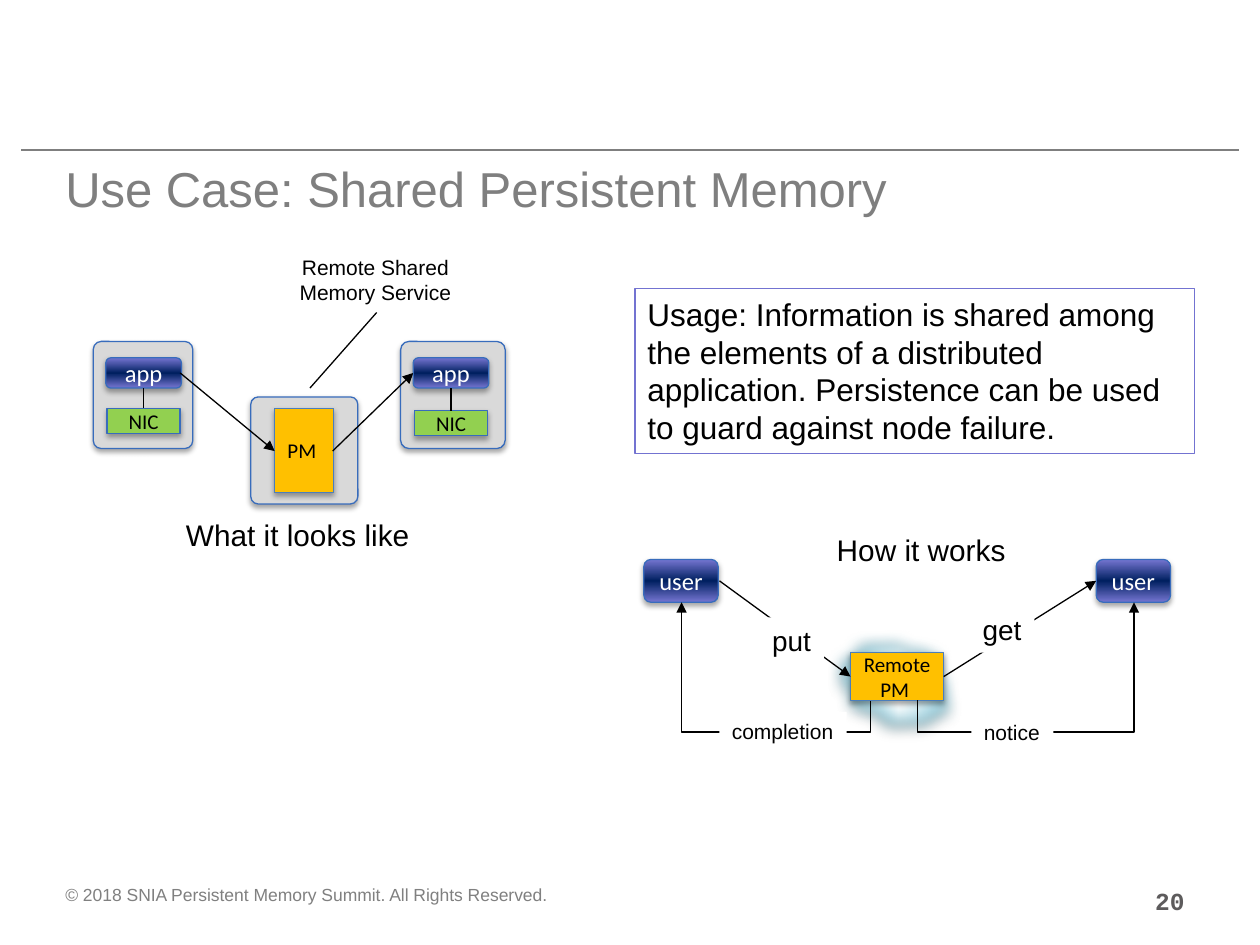
from lxml import etree
from pptx import Presentation
from pptx.dml.color import RGBColor
from pptx.enum.shapes import MSO_CONNECTOR, MSO_SHAPE
from pptx.enum.text import MSO_ANCHOR, PP_ALIGN
from pptx.oxml.ns import qn
from pptx.util import Inches, Pt

LEFT, CENTER, RIGHT = PP_ALIGN.LEFT, PP_ALIGN.CENTER, PP_ALIGN.RIGHT
TOP, MIDDLE = MSO_ANCHOR.TOP, MSO_ANCHOR.MIDDLE
RECT, ROUND, CLOUD = MSO_SHAPE.RECTANGLE, MSO_SHAPE.ROUNDED_RECTANGLE, MSO_SHAPE.CLOUD
STRAIGHT, ELBOW = MSO_CONNECTOR.STRAIGHT, MSO_CONNECTOR.ELBOW

BLACK = RGBColor(0, 0, 0)
WHITE = RGBColor(0xFF, 0xFF, 0xFF)
GRAY = RGBColor(0x7F, 0x7F, 0x7F)
FOOTER = RGBColor(0x80, 0x80, 0x80)
NUMBER = RGBColor(0x5D, 0x5B, 0x5C)
PURPLE = RGBColor(0x73, 0x73, 0xD1)
NODE = RGBColor(0xD9, 0xD9, 0xD9)
BLUE = RGBColor(0x38, 0x6C, 0xBC)
STEEL = RGBColor(0x4B, 0x7E, 0xBC)
AMBER = RGBColor(0xFF, 0xC0, 0x00)
GREEN = RGBColor(0x92, 0xD0, 0x50)
TEAL = RGBColor(0x93, 0xCD, 0xDD)
APP_STOPS = [(0, "7575D1"), (50, "002060"), (100, "7575D1")]
CLOUD_STOPS = [(9, "93CDDD"), (52, "FFFFFF"), (93, "93CDDD")]

# Text: box, wording, size, colour, alignment, anchor, font, bold
TEXTS = [
    ((0.42, 6.97, 8.08, 0.39), "© 2018 SNIA Persistent Memory Summit. All Rights Reserved.",
     10, FOOTER, LEFT, TOP, "Arial", False),
    ((0.42, 1.12, 7.33, 0.75), "Use Case: Shared Persistent Memory",
     28, GRAY, LEFT, MIDDLE, "Arial", False),
    ((1.25, 4.05, 2.1, 0.4), "What it looks like", 17, BLACK, RIGHT, TOP, "Arial", False),
    ((6.37, 4.17, 1.71, 0.36), "How it works", 17, BLACK, RIGHT, TOP, "Arial", False),
    ((2.23, 1.97, 1.5, 0.5), "Remote Shared Memory Service",
     12, BLACK, CENTER, TOP, "Arial", False),
    ((7.17, 6.98, 2.33, 0.52), "20", 14, NUMBER, RIGHT, TOP, "Courier New", True),
]
USAGE = ("Usage: Information is shared among the elements of a distributed application. "
         "Persistence can be used to guard against node failure.")

# Application nodes: left, width, app left, NIC top
NODES = [(0.74, 0.79, 0.84, 3.24), (3.18, 0.83, 3.28, 3.26)]
USERS = [5.11, 8.7]

# Straight lines: start, end, arrowhead at the end
MEMORY_LINES = [
    ((1.43, 2.96), (2.18, 3.58), True),
    ((2.64, 3.58), (3.28, 2.96), True),
    ((2.99, 2.48), (2.46, 3.08), False),
]
FLOW_LINES = [((5.71, 4.61), (6.75, 5.37), True), ((7.49, 5.37), (8.7, 4.61), True)]
# Elbows, turned 90 degrees: box, bend, flipped, arrow end
FLOW_ELBOWS = [
    ((5.77, 4.42, 0.78, 1.5), -32200, True, "tailEnd"),
    ((7.75, 4.31, 0.78, 1.72), 132200, False, "headEnd"),
]
FLOW_LABELS = [
    ((5.71, 5.65, 1.01, 0.3), "completion", 12),
    ((6.03, 4.9, 0.51, 0.37), "put", 16),
    ((7.7, 4.81, 0.51, 0.37), "get", 16),
    ((7.71, 5.66, 0.65, 0.3), "notice", 12),
]

prs = Presentation()
prs.slide_width, prs.slide_height = Inches(10), Inches(7.5)
s = prs.slides.add_slide(prs.slide_layouts[6])


def sub(parent, tag, **attrs):
    return etree.SubElement(parent, qn(tag), attrs)


def write(shape, text, size, color, align=LEFT, anchor=TOP, font="Arial",
          bold=False, wrap=True, side=0.1, edge=0.05):
    tf = shape.text_frame
    tf.text = text
    tf.word_wrap, tf.vertical_anchor = wrap, anchor
    tf.margin_left = tf.margin_right = Inches(side)
    tf.margin_top = tf.margin_bottom = Inches(edge)
    for p in tf.paragraphs:
        p.alignment = align
        for r in p.runs:
            r.font.name, r.font.size, r.font.bold = font, Pt(size), bold
            r.font.color.rgb = color


def add_box(kind, at, fill=None, line=None, shadow=False, adj=None, soft=False):
    sp = s.shapes.add_shape(kind, *map(Inches, at))
    if adj is not None:
        sp.adjustments[0] = adj
    if isinstance(fill, list):
        sp.fill.gradient()
        sp.fill.gradient_angle = 90
        stops = sp._element.spPr.find(".//" + qn("a:gsLst"))
        for old in list(stops):
            stops.remove(old)
        for pos, color in fill:
            sub(sub(stops, "a:gs", pos=str(pos * 1000)), "a:srgbClr", val=color)
    elif fill is not None:
        sp.fill.solid()
        sp.fill.fore_color.rgb = fill
    else:
        sp.fill.background()
    if line is not None:
        sp.line.color.rgb, sp.line.width = line, Pt(0.75)
    else:
        sp.line.fill.background()
    sp.shadow.inherit = False
    effects = sp._element.spPr.find(qn("a:effectLst"))
    if shadow:
        outer = sub(effects, "a:outerShdw", blurRad=str(Pt(3.1)), dist=str(Pt(1.8)),
                    dir="5400000", rotWithShape="0")
        sub(sub(outer, "a:srgbClr", val="000000"), "a:alpha", val="35000")
    if soft:
        sub(effects, "a:softEdge", rad=str(Pt(8.9)))
    return sp


def add_block(kind, at, text, size, fill, line=BLUE, color=BLACK):
    sp = add_box(kind, at, fill, line, shadow=True)
    write(sp, text, size, color, CENTER, MIDDLE, "Calibri", side=0, edge=0)


def add_line(start, end, arrow=None, color=BLACK, kind=STRAIGHT):
    c = s.shapes.add_connector(kind, *map(Inches, (*start, *end)))
    c.line.color.rgb, c.line.width = color, Pt(0.75)
    if arrow:
        sub(c.line._get_or_add_ln(), "a:" + arrow, type="triangle")
    sub(c._element.spPr, "a:effectLst")
    return c


def add_elbow(at, bend, flipped, arrow):
    x, y, w, h = at
    spPr = add_line((x, y), (x + w, y + h), arrow, kind=ELBOW)._element.spPr
    xfrm = spPr.find(qn("a:xfrm"))
    xfrm.set("rot", "5400000")
    if flipped:
        xfrm.set("flipH", "1")
    guides = spPr.find(qn("a:prstGeom")).find(qn("a:avLst"))
    sub(guides, "a:gd", name="adj1", fmla=f"val {bend}")


# Header rule, title, captions and footer
add_line((0.17, 1.19), (9.83, 1.19), color=GRAY)
for at, *style in TEXTS:
    write(s.shapes.add_textbox(*map(Inches, at)), *style)
write(add_box(RECT, (5.04, 2.29, 4.44, 1.31), line=PURPLE), USAGE, 18, BLACK)

# What it looks like: shared memory between two nodes
add_box(ROUND, (1.99, 3.15, 0.85, 0.85), NODE, BLUE, True, 0.07)
add_block(RECT, (2.18, 3.24, 0.47, 0.67), "PM ", 12, AMBER, STEEL)
for left, width, app, nic_top in NODES:
    add_box(ROUND, (left, 2.71, width, 0.85), NODE, BLUE, True, 0.08)
    add_block(ROUND, (app, 2.84, 0.6, 0.24), "app", 14, APP_STOPS, color=WHITE)
    add_block(RECT, (app + 0.01, nic_top, 0.58, 0.2), "NIC", 12, GREEN)
    add_line((app + 0.3, 3.08), (app + 0.3, nic_top))
for start, end, arrow in MEMORY_LINES:
    add_line(start, end, "tailEnd" if arrow else None)

# How it works: users around the remote memory
add_box(CLOUD, (6.61, 4.8, 0.94, 1.25), TEAL, shadow=True, soft=True).rotation = 90
add_box(CLOUD, (6.69, 4.86, 0.83, 1.12), CLOUD_STOPS, soft=True).rotation = 90
for left in USERS:
    add_block(ROUND, (left, 4.44, 0.59, 0.34), "user", 14, APP_STOPS, color=WHITE)
add_block(RECT, (6.75, 5.18, 0.74, 0.38), "Remote\nPM ", 12, AMBER, STEEL)
for start, end, arrow in FLOW_LINES:
    add_line(start, end, "tailEnd" if arrow else None)
for elbow in FLOW_ELBOWS:
    add_elbow(*elbow)
for at, text, size in FLOW_LABELS:
    write(add_box(RECT, at, WHITE), text, size, BLACK, wrap=False)

prs.save("out.pptx")
